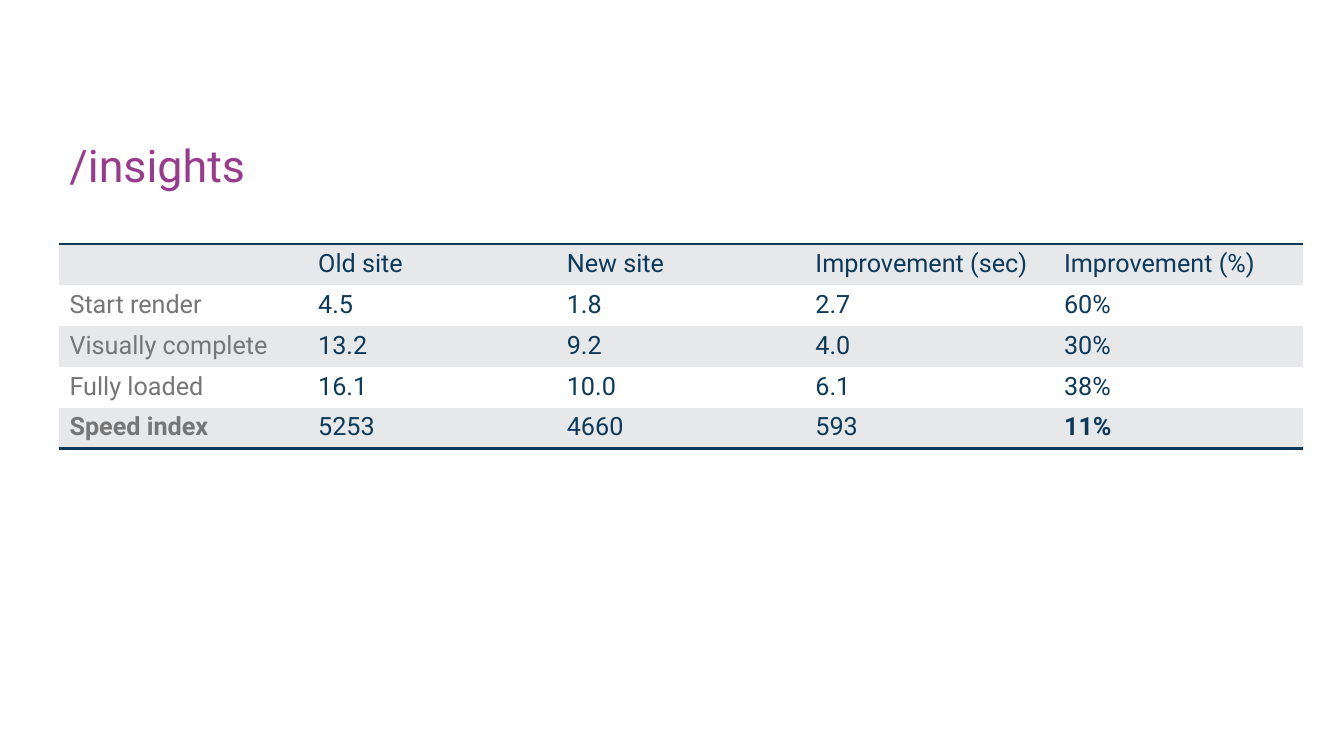
import dataclasses
import pptx
import pptx.dml.color
import pptx.enum.text
import pptx.oxml.ns
import pptx.util
from lxml import etree

Pt = pptx.util.Pt
FONT = "Roboto"
COLORS = {"title": "983B8E", "navy": "0C3A5B", "gray": "767676",
          "band": "E7E8EA", "white": "FFFFFF"}
LEFT, WIDTH = 42.5, 888
ROW = 29.25
PLAIN = "{2D5ABB26-0587-4C30-8999-92F81FD0307C}"  # table style without grid


@dataclasses.dataclass
class Line:
    name: str
    cells: tuple[str, ...]
    bold: tuple[str, ...] = ()


LINES = [
    Line("", ("Old site", "New site", "Improvement (sec)", "Improvement (%)")),
    Line("Start render", ("4.5", "1.8", "2.7", "60%")),
    Line("Visually complete", ("13.2", "9.2", "4.0", "30%")),
    Line("Fully loaded", ("16.1", "10.0", "6.1", "38%")),
    Line("Speed index", ("5253", "4660", "593", "11%"), ("Speed index", "11%")),
]


def rgb(key: str) -> pptx.dml.color.RGBColor:
    return pptx.dml.color.RGBColor.from_string(COLORS[key])


def write(para, text: str, size: float, color: str, bold: bool = False) -> None:
    run = para.add_run()
    run.text = text
    run.font.name = FONT
    run.font.size = Pt(size)
    run.font.bold = bold
    run.font.color.rgb = rgb(color)


def rule(cell, side: str) -> None:
    """Draw a navy border on one side of a cell."""
    qn = pptx.oxml.ns.qn
    line = etree.Element(qn(f"a:ln{side}"), w=str(Pt(2)))
    fill = etree.SubElement(line, qn("a:solidFill"))
    etree.SubElement(fill, qn("a:srgbClr"), val=COLORS["navy"])
    cell._tc.get_or_add_tcPr().insert(0, line)


def title(slide) -> None:
    frame = slide.shapes.add_textbox(Pt(LEFT), Pt(90), Pt(WIDTH), Pt(51)).text_frame
    frame.word_wrap = True
    frame.vertical_anchor = pptx.enum.text.MSO_ANCHOR.BOTTOM
    para = frame.paragraphs[0]
    para.line_spacing = 0.9
    write(para, "/insights", 32, "title")


def table(slide) -> None:
    cols = 1 + len(LINES[0].cells)
    grid = slide.shapes.add_table(len(LINES), cols, Pt(LEFT), Pt(174.25),
                                  Pt(WIDTH), Pt(ROW * len(LINES))).table
    grid._tbl.tblPr.find(pptx.oxml.ns.qn("a:tableStyleId")).text = PLAIN
    grid.first_row = grid.horz_banding = False
    for col in grid.columns:
        col.width = Pt(WIDTH / cols)
    for i, line in enumerate(LINES):
        grid.rows[i].height = Pt(ROW)
        for j, text in enumerate((line.name, *line.cells)):
            cell = grid.cell(i, j)
            cell.fill.solid()
            cell.fill.fore_color.rgb = rgb("white" if i % 2 else "band")
            if text:
                write(cell.text_frame.paragraphs[0], text, 18,
                      "navy" if j else "gray", text in line.bold)
            # Rules above the first and below the last row
            if i == 0:
                rule(cell, "T")
            elif i == len(LINES) - 1:
                rule(cell, "B")


def main() -> None:
    deck = pptx.Presentation()
    deck.slide_width, deck.slide_height = Pt(960), Pt(540)
    slide = deck.slides.add_slide(deck.slide_layouts[6])
    title(slide)
    table(slide)
    deck.save("out.pptx")


if __name__ == "__main__":
    main()
